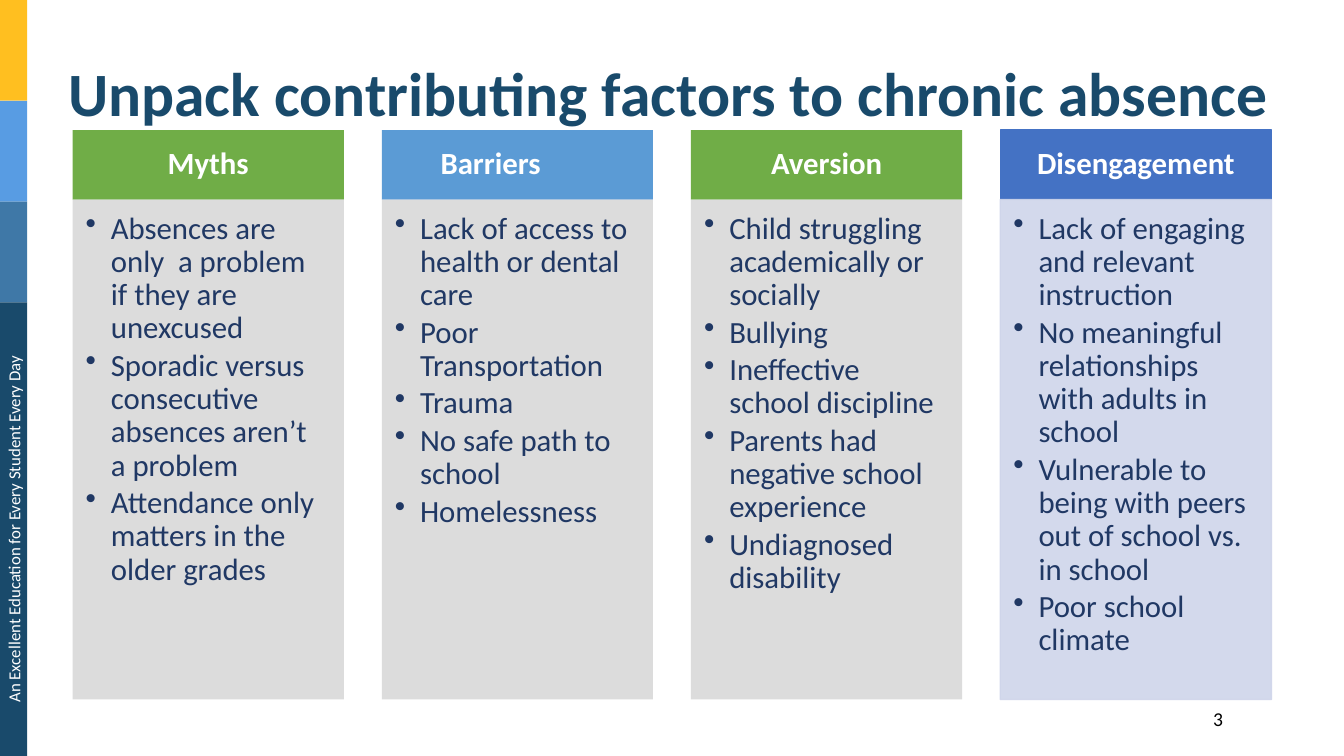
import pptx
import pptx.util
import pptx.dml.color
import pptx.enum.shapes
import pptx.enum.text
import pptx.oxml
import pptx.oxml.ns
import lxml.etree

Inches = pptx.util.Inches
Pt = pptx.util.Pt
ALIGN = pptx.enum.text.PP_ALIGN
ANCHOR = pptx.enum.text.MSO_ANCHOR

FONT = "Calibri"
NAVY = "194A6B"
WHITE = "FFFFFF"
BODY_TEXT = "203864"
GREEN = "70AD47"
GREY = "D9D9D9"
INDIGO = "4472C4"
LAVENDER = "CFD5EA"

STRIPES = [("FFBF20", 1), ("589CE3", 1), ("3F78A7", 1), (NAVY, 4.5)]

COLUMNS = [
    ("Myths", GREEN, GREY, None, 0, [
        "Absences are only  a problem if they are unexcused",
        "Sporadic versus consecutive absences aren’t a problem",
        "Attendance only matters in the older grades"]),
    ("Barriers", "5B9BD5", GREY, None, 0.53, [
        "Lack of access to health or dental care",
        "Poor Transportation",
        "Trauma",
        "No safe path to school",
        "Homelessness"]),
    ("Aversion", GREEN, GREY, None, 0, [
        "Child struggling academically or socially",
        "Bullying",
        "Ineffective school discipline",
        "Parents had negative school experience",
        "Undiagnosed disability"]),
    ("Disengagement", INDIGO, LAVENDER, 1, 0, [
        "Lack of engaging and relevant instruction",
        "No meaningful relationships with adults in school",
        "Vulnerable to being with peers out of school vs. in school",
        "Poor school climate"]),
]


def color(value):
    """Return the RGB colour for a hex string."""
    return pptx.dml.color.RGBColor.from_string(value)


def make_transparent(fill, opacity):
    """Set the opacity, in percent, of a solid fill."""
    node = fill._xPr.find(pptx.oxml.ns.qn("a:solidFill"))[0]
    alpha = lxml.etree.SubElement(node, pptx.oxml.ns.qn("a:alpha"))
    alpha.set("val", str(opacity * 1000))


def add_rectangle(page, box, fill, line_width=None, opacity=100):
    """Add a flat rectangle, outlined in its own colour if a width is given."""
    shape = page.shapes.add_shape(
        pptx.enum.shapes.MSO_SHAPE.RECTANGLE, *map(Inches, box))
    shape.shadow.inherit = False
    shape.fill.solid()
    shape.fill.fore_color.rgb = color(fill)
    fills = [shape.fill]
    if line_width:
        shape.line.width = Pt(line_width)
        shape.line.color.rgb = color(fill)
        fills.append(shape.line.fill)
    else:
        shape.line.fill.background()
    if opacity < 100:
        for part in fills:
            make_transparent(part, opacity)
    return shape


def set_frame(shape, insets, anchor):
    """Prepare a shape's text frame with insets: left, top, right, bottom."""
    frame = shape.text_frame
    frame.word_wrap = True
    frame.vertical_anchor = anchor
    (frame.margin_left, frame.margin_top,
     frame.margin_right, frame.margin_bottom) = map(Inches, insets)
    return frame


def add_bullet(para):
    """Give a paragraph a hanging round bullet."""
    properties = para._p.get_or_add_pPr()
    properties.set("marL", str(Inches(0.25)))
    properties.set("indent", str(-Inches(0.25)))
    bullet = lxml.etree.SubElement(properties, pptx.oxml.ns.qn("a:buChar"))
    bullet.set("char", "•")


def write(para, text, size, hue, bold=False, align=ALIGN.LEFT, spacing=0.9):
    """Write one styled run into a paragraph."""
    para.alignment = align
    para.line_spacing = spacing
    span = para.add_run()
    span.text = text
    span.font.name = FONT
    span.font.size = Pt(size)
    span.font.bold = bold
    span.font.color.rgb = color(hue)


def add_label(page, box, text, size, hue, rotation=0, **style):
    """Add a one-line text box."""
    label = page.shapes.add_textbox(*map(Inches, box))
    label.rotation = rotation
    frame = set_frame(label, (0.1, 0.05, 0.1, 0.05), ANCHOR.MIDDLE)
    write(frame.paragraphs[0], text, size, hue, **style)


def add_side_band(page, box):
    """Add the striped band with its upright motto."""
    left, top, width, height = box
    for fill, stripe_height in STRIPES:
        add_rectangle(page, (left, top, width, stripe_height), fill)
        top += stripe_height
    middle_x, middle_y = left + width / 2, top - stripe_height / 2
    add_label(page, (middle_x - stripe_height / 2, middle_y - 0.15,
                     stripe_height, 0.3),
              "An Excellent Education for Every Student Every Day", 12, WHITE,
              rotation=270, align=ALIGN.CENTER, spacing=1)


def add_column(page, box, column):
    """Add one factor: a heading bar above a bulleted panel."""
    heading, head_fill, body_fill, line_width, shift, points = column
    left, top, width, height = box
    head_height = 0.69
    head = add_rectangle(page, (left, top, width, head_height), head_fill,
                         line_width)
    frame = set_frame(head, (0.17, 0.1, 0.17 + shift, 0.1), ANCHOR.MIDDLE)
    write(frame.paragraphs[0], heading, 22, WHITE, bold=True,
          align=ALIGN.CENTER)

    body = add_rectangle(
        page, (left, top + head_height, width, height - head_height),
        body_fill, line_width, opacity=90)
    frame = set_frame(body, (0.13, 0.13, 0.17, 0.19), ANCHOR.TOP)
    for index, point in enumerate(points):
        para = frame.add_paragraph() if index else frame.paragraphs[0]
        add_bullet(para)
        para.space_after = Pt(3)
        write(para, point, 22, BODY_TEXT)


def add_columns(page, box):
    """Spread the factor columns evenly over the box."""
    left, top, width, height = box
    column_width = 2.69
    step = (width - column_width) / (len(COLUMNS) - 1)
    for index, column in enumerate(COLUMNS):
        add_column(page, (left + index * step, top, column_width, height),
                   column)


def main():
    """Build and save the deck."""
    deck = pptx.Presentation()
    deck.slide_width = Inches(13.33)
    deck.slide_height = Inches(7.5)
    page = deck.slides.add_slide(deck.slide_layouts[6])
    add_label(page, (11.38, 6.96, 0.85, 0.34), "3", 14, "000000",
              align=ALIGN.RIGHT, spacing=1)
    add_side_band(page, (0, 0, 0.27, 7.5))
    add_label(page, (0.58, 0.64, 12.17, 0.64),
              "Unpack contributing factors to chronic absence", 44, NAVY,
              bold=True)
    add_columns(page, (0.72, 1.29, 11.89, 5.65))
    deck.save("out.pptx")


if __name__ == "__main__":
    main()
